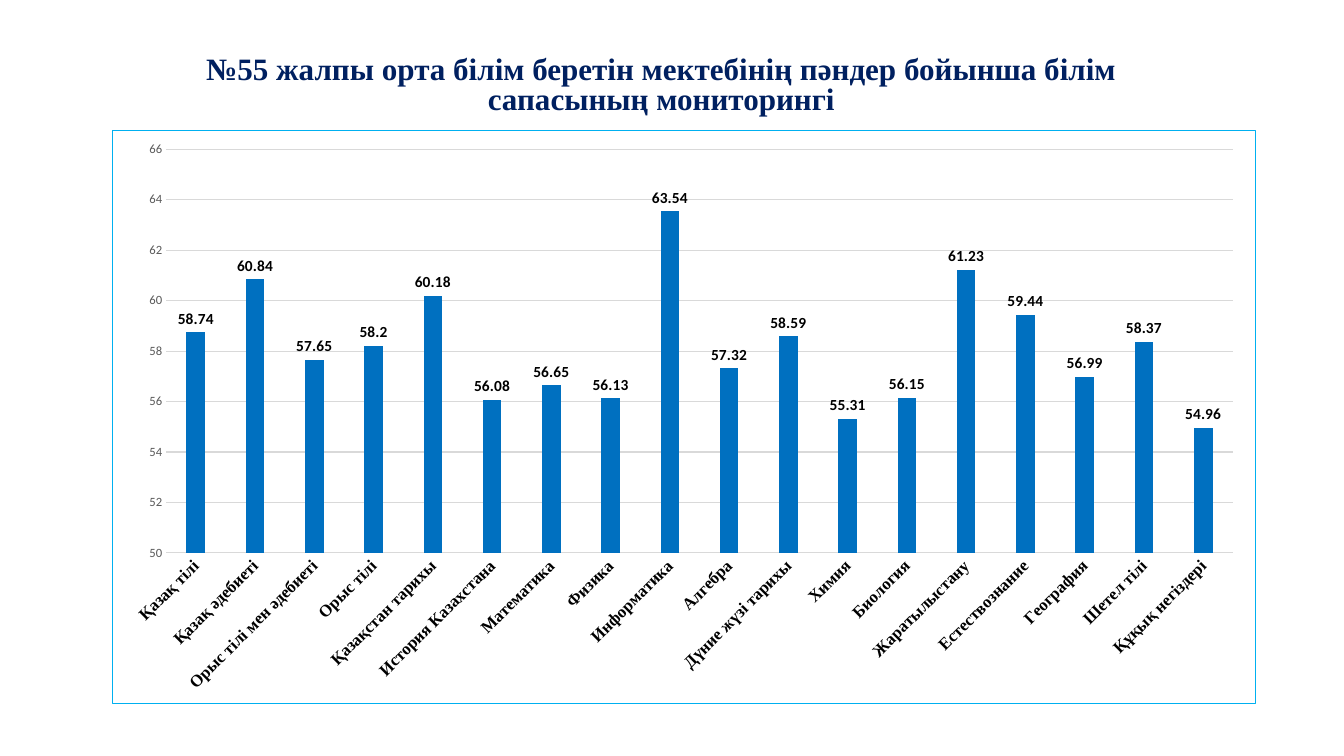
from lxml import etree
from pptx import Presentation
from pptx.chart.data import CategoryChartData
from pptx.dml.color import RGBColor
from pptx.enum.chart import XL_CHART_TYPE, XL_LABEL_POSITION, XL_TICK_MARK
from pptx.enum.text import PP_ALIGN
from pptx.oxml import parse_xml
from pptx.oxml.ns import nsdecls, qn
from pptx.util import Inches, Pt

COLUMN_CLUSTERED = XL_CHART_TYPE.COLUMN_CLUSTERED
OUTSIDE_END = XL_LABEL_POSITION.OUTSIDE_END
NO_TICK = XL_TICK_MARK.NONE
CENTER = PP_ALIGN.CENTER

NAVY = RGBColor(0x00, 0x20, 0x60)
BLUE = RGBColor(0x00, 0x70, 0xC0)
SKY = RGBColor(0x00, 0xB0, 0xF0)
BLACK = RGBColor(0x00, 0x00, 0x00)
GRAY = RGBColor(0x59, 0x59, 0x59)
LIGHT_GRAY = RGBColor(0xD9, 0xD9, 0xD9)

TITLE = "№55 жалпы орта білім беретін мектебінің пәндер бойынша білім сапасының мониторингі"
SUBJECT_QUALITY = {
    "Қазақ тілі": 58.74,
    "Қазақ әдебиеті": 60.84,
    "Орыс тілі мен әдебиеті": 57.65,
    "Орыс тілі": 58.2,
    "Қазақстан тарихы": 60.18,
    "История Казахстана": 56.08,
    "Математика": 56.65,
    "Физика": 56.13,
    "Информатика": 63.54,
    "Алгебра": 57.32,
    "Дүние жүзі тарихы": 58.59,
    "Химия": 55.31,
    "Биология": 56.15,
    "Жаратылыстану": 61.23,
    "Естествознание": 59.44,
    "География": 56.99,
    "Шетел тілі": 58.37,
    "Құқық негіздері": 54.96,
}


class SlideBuilder:
    serif = "Times New Roman"
    sans = "Calibri"
    line_width = Pt(0.75)

    def __init__(self, presentation):
        self.slide = presentation.slides.add_slide(presentation.slide_layouts[6])

    def style_font(self, font, name, size, color, bold=False):
        font.name = name
        font.size = Pt(size)
        font.bold = bold
        font.color.rgb = color

    def style_line(self, line, color):
        line.color.rgb = color
        line.width = self.line_width

    def title(self, text, left, top, width, height):
        shape = self.slide.shapes.add_textbox(
            Inches(left), Inches(top), Inches(width), Inches(height))
        shape.text_frame.word_wrap = True
        shape.text_frame.text = text
        paragraph = shape.text_frame.paragraphs[0]
        paragraph.alignment = CENTER
        paragraph.line_spacing = 0.8
        self.style_font(paragraph.runs[0].font, self.serif, 22.2, NAVY, True)

    def column_chart(self, values, left, top, width, height):
        chart_data = CategoryChartData()
        chart_data.categories = list(values)
        chart_data.add_series("Series 1", list(values.values()))
        chart = self.slide.shapes.add_chart(
            COLUMN_CLUSTERED, Inches(left), Inches(top),
            Inches(width), Inches(height), chart_data).chart
        chart.has_legend = False
        chart.has_title = False
        self.style_font(chart.font, self.sans, 10, BLACK)
        self.style_columns(chart.plots[0])
        self.style_axes(chart)
        self.border(chart, SKY)

    def style_columns(self, plot):
        plot.gap_width = 219
        plot.overlap = -27
        plot.vary_by_categories = False
        fill = plot.series[0].format.fill
        fill.solid()
        fill.fore_color.rgb = BLUE
        plot.has_data_labels = True
        labels = plot.data_labels
        labels.show_value = True
        labels.position = OUTSIDE_END
        self.style_font(labels.font, self.sans, 11, BLACK, True)

    def style_axes(self, chart):
        subjects, scale = chart.category_axis, chart.value_axis
        for axis in (subjects, scale):
            axis.major_tick_mark = NO_TICK
            axis.minor_tick_mark = NO_TICK
        self.style_font(subjects.tick_labels.font, self.serif, 12, BLACK, True)
        self.style_line(subjects.format.line, LIGHT_GRAY)
        body = subjects._element.find(qn("c:txPr")).find(qn("a:bodyPr"))
        body.set("rot", "-2700000")
        body.set("vert", "horz")
        scale.minimum_scale = 50
        scale.maximum_scale = 66
        scale.major_unit = 2
        self.style_font(scale.tick_labels.font, self.sans, 9, GRAY)
        scale.format.line.fill.background()
        self.style_line(scale.major_gridlines.format.line, LIGHT_GRAY)

    def border(self, chart, color):
        properties = parse_xml(f"<c:spPr {nsdecls('c', 'a')}><a:noFill/></c:spPr>")
        line = etree.SubElement(properties, qn("a:ln"), w=str(self.line_width))
        fill = etree.SubElement(line, qn("a:solidFill"))
        etree.SubElement(fill, qn("a:srgbClr"), val=str(color))
        chart._chartSpace.find(qn("c:chart")).addnext(properties)


def main():
    presentation = Presentation()
    presentation.slide_width = Inches(13.33)
    presentation.slide_height = Inches(7.5)
    builder = SlideBuilder(presentation)
    builder.title(TITLE, 1.56, 0.51, 10, 0.69)
    builder.column_chart(SUBJECT_QUALITY, 1.11, 1.29, 11.35, 5.69)
    presentation.save("out.pptx")


if __name__ == "__main__":
    main()
